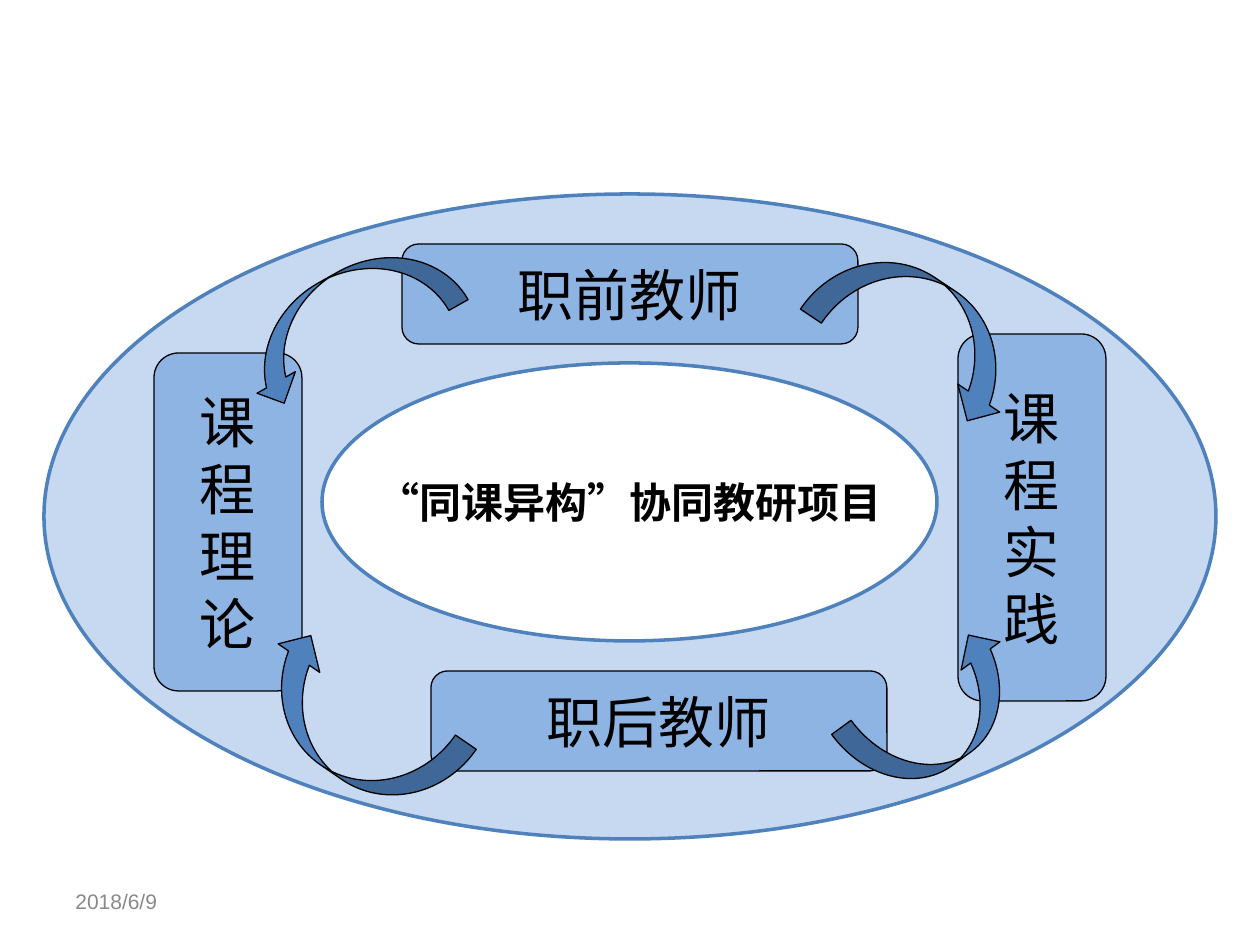
from pptx import Presentation
from pptx import util as u
from pptx.dml.color import RGBColor
from pptx.enum import shapes, text
from pptx.oxml.ns import qn
from lxml import etree

# Content; boxes are left, top, width, height in px
SLIDE = (1260, 945)
COLORS = {"ring": "C6D9F1", "edge": "4F81BD", "box": "8EB4E3",
          "white": "FFFFFF", "black": "000000", "date": "898989"}
CJK = "Noto Sans CJK SC"
RING = (44, 194, 1172, 645)
CORE = (322, 363, 615, 278)
PROJECT = "“同课异构”协同教研项目"
THEMES = [
    (["课", "程", "理", "论"], (154, 353, 148, 338)),
    (["课", "程", "实", "践"], (958, 334, 148, 367)),
    (["职前教师"], (402, 244, 456, 100)),
    (["职后教师"], (431, 671, 456, 100)),
]
RIGHT = shapes.MSO_SHAPE.CURVED_RIGHT_ARROW
LEFT = shapes.MSO_SHAPE.CURVED_LEFT_ARROW
ARROWS = [
    (RIGHT, (890, 620, 96, 193), 234),
    (RIGHT, (301, 202, 88, 233), 60.6),
    (LEFT, (304, 614, 101, 226), 124.5),
    (LEFT, (872, 217, 101, 226), 303.8),
]
DATE, DATE_BOX = "2018/6/9", (63, 876, 294, 50)

PX = u.Inches(1) // 126

prs = Presentation()
prs.slide_width, prs.slide_height = [n * PX for n in SLIDE]
slide = prs.slides.add_slide(prs.slide_layouts[6])


def color(name):
    return RGBColor.from_string(COLORS[name])


def add_figure(kind, box, fill, line, width):
    figure = slide.shapes.add_shape(kind, *[n * PX for n in box])
    figure.shadow.inherit = False
    figure.fill.solid()
    figure.fill.fore_color.rgb = color(fill)
    figure.line.color.rgb = color(line)
    figure.line.width = u.Pt(width)
    return figure


def write(figure, lines, size, font, ink="black", bold=False,
          align=text.PP_ALIGN.CENTER, wrap=False, spacing=None):
    frame = figure.text_frame
    frame.word_wrap = wrap
    frame.vertical_anchor = text.MSO_ANCHOR.MIDDLE
    frame.text = "\n".join(lines)
    for paragraph in frame.paragraphs:
        paragraph.alignment = align
        paragraph.line_spacing = spacing
        paragraph.font.size = u.Pt(size)
        paragraph.font.bold = bold
        paragraph.font.color.rgb = color(ink)
        paragraph.font.name = font
        # East Asian characters take their own typeface
        defaults = paragraph._p.find(".//" + qn("a:defRPr"))
        etree.SubElement(defaults, qn("a:ea")).set("typeface", CJK)


# Outer ring, date and central project
add_figure(shapes.MSO_SHAPE.OVAL, RING, "ring", "edge", 2)
date = slide.shapes.add_textbox(*[n * PX for n in DATE_BOX])
write(date, [DATE], 12, "Arial", "date", align=text.PP_ALIGN.LEFT, wrap=True)
core = add_figure(shapes.MSO_SHAPE.OVAL, CORE, "white", "edge", 2)
write(core, [PROJECT], 24, CJK, bold=True)

# Theme boxes around the project
for lines, box in THEMES:
    theme = add_figure(shapes.MSO_SHAPE.ROUNDED_RECTANGLE, box, "box", "black", 0.75)
    write(theme, lines, 32, "Arial", spacing=u.Pt(38.4))

# Curved arrows from teachers to courses
for kind, box, angle in ARROWS:
    add_figure(kind, box, "edge", "black", 0.75).rotation = angle

prs.save("out.pptx")
